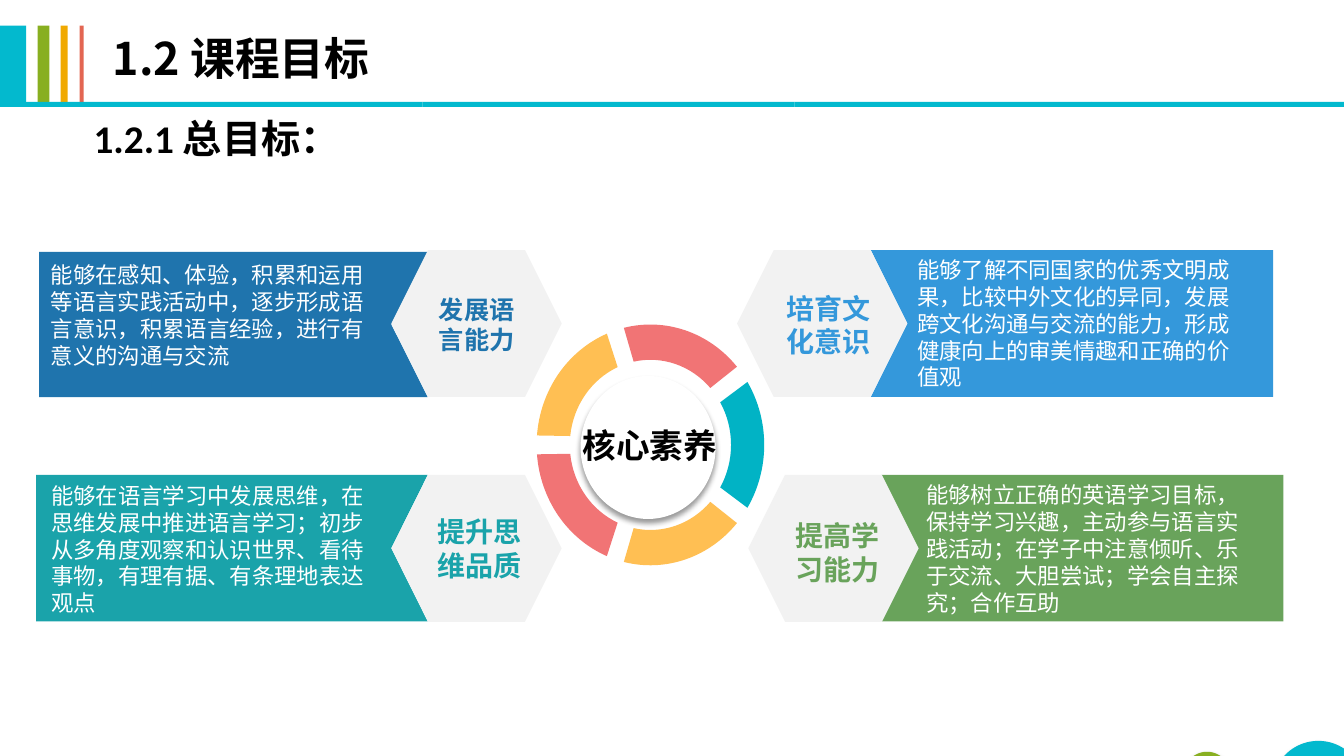
from math import cos, radians, sin, tan

from lxml.etree import SubElement as Sub
from pptx import Presentation
from pptx.dml.color import RGBColor as RGB
from pptx.enum.shapes import MSO_SHAPE as Kind
from pptx.enum.text import MSO_ANCHOR as Anchor, PP_ALIGN as Align
from pptx.oxml.ns import qn
from pptx.util import Pt

# Content: boxes are left, top, width, height
TITLE = "1.2 课程目标"
SUB = "1.2.1 总目标："
CORE = "核心素养"
GOALS = [
    dict(hue="blue", side=1, banner=(28, 180, 277.5, 103.7), hexa=(279.5, 178.6),
         label="发展语\n言能力", size="small", tag=(296.5, 198.5, 88),
         body="能够在感知、体验，积累和运用等语言实践活动中，逐步形成语言意识，积累语言经验，进行有意义的沟通与交流",
         area=(29.3, 185.8, 250.5, 78.5)),
    dict(hue="sky", side=-1, banner=(622, 178.6, 287.3, 104.8), hexa=(526.5, 178.6),
         label="培育文化意识", size="label", tag=(551, 198.5, 81.5),
         body="能够了解不同国家的优秀文明成果，比较中外文化的异同，发展跨文化沟通与交流的能力，形成健康向上的审美情趣和正确的价值观",
         area=(648, 185.4, 250.5, 91)),
    dict(hue="sea", side=1, banner=(25.8, 339.2, 279.7, 104.7), hexa=(279.5, 339.2),
         label="提升思维品质", size="label", tag=(301.5, 358.2, 81.5),
         body="能够在语言学习中发展思维，在思维发展中推进语言学习；初步从多角度观察和认识世界、看待事物，有理有据、有条理地表达观点",
         area=(29.5, 346.8, 242.5, 91)),
    dict(hue="green", side=-1, banner=(629.5, 339.2, 287.3, 104.7), hexa=(534.5, 339.2),
         label="提高学习能力", size="label", tag=(557.3, 361.2, 81.5),
         body="能够树立正确的英语学习目标，保持学习兴趣，主动参与语言实践活动；在学子中注意倾听、乐于交流、大胆尝试；学会自主探究；合作互助",
         area=(654.6, 346.3, 250.5, 91)),
]
STRIPES = [(0, 18.7, "cyan"), (26.8, 8.6, "lime"), (43.4, 5, "gold"), (56.9, 2.9, "red")]
RULE = [0, 301.7, 567.4, 780, 960]
DOTS = [(908.6, 529.2, 66.2, "cyan"), (845.3, 537, 33.8, "lime")]
RING = ["teal", "amber", "coral", "amber", "coral"]

THEME = dict(
    color=dict(cyan="03B9CE", lime="88AF20", gold="F0A901", red="E36652",
               teal="01B3C5", amber="FFBF53", coral="F17475", blue="1F74AD",
               sky="3498DB", sea="1AA3AA", green="69A35B", pale="F2F2F2",
               white="FFFFFF", black="000000"),
    size=dict(title=32, sub=28, core=24, label=20, small=18, body=16),
    asian="Noto Sans CJK SC",
)

deck = Presentation()
deck.slide_width, deck.slide_height = Pt(960), Pt(540)
slide = deck.slides.add_slide(deck.slide_layouts[6])
shapes = slide.shapes


def tint(name):
    return RGB.from_string(THEME["color"][name])


def paint(shape, hue):
    shape.shadow.inherit = False
    shape.fill.solid()
    shape.fill.fore_color.rgb = tint(hue)
    shape.line.fill.background()
    return shape


def draw(kind, box, hue):
    return paint(shapes.add_shape(kind, *map(Pt, box)), hue)


def trace(dots, hue):
    dots = [(Pt(x), Pt(y)) for x, y in dots]
    pen = shapes.build_freeform(*dots[0])
    pen.add_line_segments(dots[1:], close=True)
    return paint(pen.convert_to_shape(), hue)


def shade(shape, blur, dist, alpha):
    fx = shape._element.spPr.find(qn("a:effectLst"))
    cast = Sub(fx, qn("a:outerShdw"), blurRad=str(Pt(blur)), dist=str(Pt(dist)),
               dir="5400000", algn="t", rotWithShape="0")
    tone = Sub(cast, qn("a:srgbClr"), val=THEME["color"]["black"])
    Sub(tone, qn("a:alpha"), val=str(alpha * 1000))


def add_run(para, text, size, hue, face, bold):
    run = para.add_run()
    run.text = text
    font = run.font
    font.size, font.bold, font.name = Pt(THEME["size"][size]), bold, face
    font.color.rgb = tint(hue)
    Sub(run._r.get_or_add_rPr(), qn("a:ea"), typeface=THEME["asian"])


def write(box, text, size, hue, face="Arial", bold=True, align=Align.LEFT,
          anchor=Anchor.MIDDLE, wrap=True):
    frame = shapes.add_textbox(*map(Pt, box)).text_frame
    frame.word_wrap, frame.vertical_anchor = wrap, anchor
    for i, line in enumerate(text.split("\n")):
        para = frame.add_paragraph() if i else frame.paragraphs[0]
        para.alignment = align
        add_run(para, line, size, hue, face, bold)


# Header stripes, rule and headings
for x, w, hue in STRIPES:
    draw(Kind.RECTANGLE, (x, 18.3, w, 54.5), hue)
for x, end in zip(RULE, RULE[1:]):
    draw(Kind.RECTANGLE, (x, 72.7, end - x, 3.6), "cyan")
write((73.4, 18.4, 443.5, 85), TITLE, "title", "black", THEME["asian"], anchor=Anchor.TOP)
write((59.8, 77.8, 212.4, 41), SUB, "sub", "black", "Calibri", anchor=Anchor.TOP)

# Corner dots
for x, y, d, hue in DOTS:
    shade(draw(Kind.OVAL, (x, y, d, d), hue), 3.5, 2.2, 32)

# Ring of five arcs round the core
MID, OUTER, INNER = (464.6, 317.8), (81.3, 86), (57.6, 60.8)


def arc(radii, start, end):
    """Points of two cubic curves: a start, then three points for each curve."""
    turns = [radians(a) for a in (start, (start + end) / 2, end)]
    pull = 4 / 3 * tan((turns[1] - turns[0]) / 4)

    def spot(t, k):
        return (MID[0] + radii[0] * (cos(t) - k * sin(t)),
                MID[1] + radii[1] * (sin(t) + k * cos(t)))

    dots = [spot(turns[0], 0)]
    for a, b in zip(turns, turns[1:]):
        dots += [spot(a, pull), spot(b, -pull), spot(b, 0)]
    return dots


def bend(shape):
    """Join each three line ends of both arcs into a cubic curve."""
    legs = list(shape._element.iter(qn("a:lnTo")))
    for i in (0, 3, 7, 10):
        trio = legs[i:i + 3]
        curve = Sub(trio[0].getparent(), qn("a:cubicBezTo"))
        trio[0].addprevious(curve)
        for leg in trio:
            curve.append(leg[0])
            leg.getparent().remove(leg)


for i, hue in enumerate(RING):
    at = i * 360 / len(RING)
    bend(trace(arc(OUTER, at - 31.5, at + 31.5) + arc(INNER, at + 30, at - 30), hue))
shade(draw(Kind.OVAL, (414.7, 268.5, 96.5, 102.2), "white"), 4, 3, 40)
write((409, 300.2, 110.9, 36), CORE, "core", "black", "Calibri",
      anchor=Anchor.TOP, wrap=False)

# Goals: notched banner, hexagon, label and body
NOTCH = 26
for goal in GOALS:
    x, y, w, h = goal["banner"]
    side = goal["side"]
    back, front = (x, x + w) if side > 0 else (x + w, x)
    trace([(back, y), (front, y), (front - side * NOTCH, y + h / 2),
           (front, y + h), (back, y + h)], goal["hue"])
    draw(Kind.HEXAGON, (*goal["hexa"], 121.7, 105), "pale")
    write((*goal["tag"], 67), goal["label"], goal["size"], goal["hue"], align=Align.CENTER)
    write(goal["area"], goal["body"], "body", "white", bold=False)

deck.save("out.pptx")
